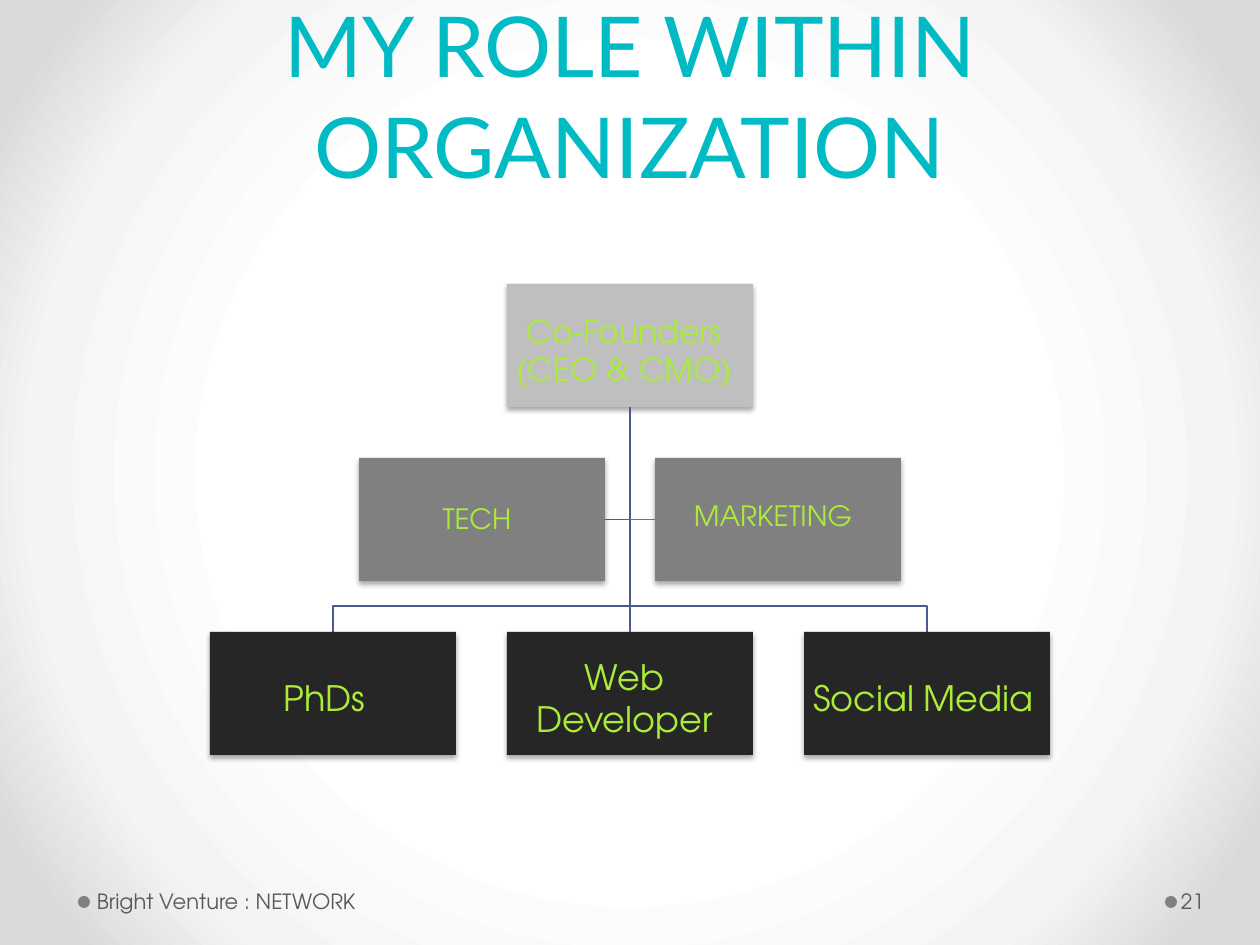
from dataclasses import dataclass

from lxml import etree
from pptx import Presentation
from pptx.dml.color import RGBColor
from pptx.enum.shapes import MSO_CONNECTOR, MSO_SHAPE
from pptx.enum.text import MSO_ANCHOR, MSO_AUTO_SIZE, PP_ALIGN
from pptx.oxml import parse_xml
from pptx.oxml.ns import qn
from pptx.util import Pt

RECT, OVAL = MSO_SHAPE.RECTANGLE, MSO_SHAPE.OVAL
STRAIGHT = MSO_CONNECTOR.STRAIGHT
MIDDLE, BOTTOM = MSO_ANCHOR.MIDDLE, MSO_ANCHOR.BOTTOM
CENTER, LEFT = PP_ALIGN.CENTER, PP_ALIGN.LEFT
NO_FIT = MSO_AUTO_SIZE.NONE

EMU_PER_PX = 914400 / 126
A_NS = 'xmlns:a="http://schemas.openxmlformats.org/drawingml/2006/main"'
BODY_FONT, TITLE_FONT = "TeX Gyre Adventor", "Lato"
TITLE_COLOR, LABEL_COLOR, FOOTER_COLOR = "00BAC4", "AAEC39", "595959"
LINK_COLOR, SIDE_LINK_COLOR, BULLET_COLOR = "4A5B8E", "5C72B2", "808080"
BACKGROUND_STOPS = [(50, "FFFFFF"), (76, "F4F4F4"), (92, "DADADA")]

# Chart grid in px
CENTER_X = 630
BOX_W, BOX_H = 246, 123
FIRST_ROW, ROW_PITCH = 284, 174
BRANCH_Y = 606


@dataclass
class Label:
    text: str
    left: int
    top: int
    width: int
    height: int
    size: int
    color: str = LABEL_COLOR
    align: PP_ALIGN = CENTER
    insets: tuple = (6, 6, 13, 6)


@dataclass
class Box:
    row: int
    offset: int  # box centre relative to the chart's axis
    fill: str
    label: Label


BOXES = {
    "founders": Box(0, 0, "BFBFBF", Label("Co-Founders\n(CEO & CMO)", 494, 291, 268, 118, 18)),
    "tech": Box(1, -148, "808080", Label("TECH", 333, 459, 295, 118, 16)),
    "marketing": Box(1, 148, "808080", Label("MARKETING", 629, 456, 295, 118, 16)),
    "phds": Box(2, -297, "262626", Label("PhDs", 194, 638, 268, 118, 20)),
    "web": Box(2, 0, "262626", Label("Web Developer", 494, 638, 268, 118, 20)),
    "social": Box(2, 297, "262626", Label("Social Media", 793, 638, 268, 118, 20)),
}
FOOTERS = [
    Label("Bright Venture : NETWORK", 91, 876, 392, 50, 12, FOOTER_COLOR, LEFT),
    Label("21", 1177, 876, 77, 50, 12, FOOTER_COLOR, LEFT, (4, 6, 6, 6)),
]
BULLET_LEFTS = [1165, 78]


def px(value: float) -> int:
    return round(value * EMU_PER_PX)


def rgb(value: str) -> RGBColor:
    return RGBColor.from_string(value)


def set_background(s) -> None:
    fill = s.background.fill
    fill.gradient()
    grad = s.background._cSld.find(".//" + qn("a:gradFill"))
    stops = "".join(f'<a:gs pos="{pos * 1000}"><a:srgbClr val="{color}"/></a:gs>'
                    for pos, color in BACKGROUND_STOPS)
    grad.getparent().replace(grad, parse_xml(
        f'<a:gradFill {A_NS} rotWithShape="1"><a:gsLst>{stops}</a:gsLst><a:path path="circle">'
        '<a:fillToRect l="50000" t="50000" r="50000" b="50000"/></a:path></a:gradFill>'))


def add_solid(s, kind: MSO_SHAPE, left: int, top: int, width: int, height: int, color: str):
    shape = s.shapes.add_shape(kind, px(left), px(top), px(width), px(height))
    shape.shadow.inherit = False
    shape.fill.solid()
    shape.fill.fore_color.rgb = rgb(color)
    shape.line.fill.background()
    return shape


def add_box(s, box: Box):
    shape = add_solid(s, RECT, CENTER_X + box.offset - BOX_W // 2,
                      FIRST_ROW + box.row * ROW_PITCH, BOX_W, BOX_H, box.fill)
    shape._element.spPr.find(qn("a:effectLst")).append(parse_xml(
        f'<a:outerShdw {A_NS} blurRad="{Pt(3.1)}" dist="{Pt(1.8)}" dir="5400000" rotWithShape="0">'
        '<a:srgbClr val="000000"><a:alpha val="35000"/></a:srgbClr></a:outerShdw>'))
    return shape


def add_label(s, label: Label) -> None:
    tb = s.shapes.add_textbox(px(label.left), px(label.top), px(label.width), px(label.height))
    tf = tb.text_frame
    tf.word_wrap = True
    tf.vertical_anchor = MIDDLE
    tf.margin_left, tf.margin_top, tf.margin_right, tf.margin_bottom = map(px, label.insets)
    tf.text = label.text
    for p in tf.paragraphs:
        p.alignment = label.align
        for r in p.runs:
            r.font.name = BODY_FONT
            r.font.size = Pt(label.size)
            r.font.color.rgb = rgb(label.color)


def style_line(shape, color: str) -> None:
    shape.line.color.rgb = rgb(color)
    shape.line.width = Pt(0.75)


def add_link(s, x1: int, y1: int, x2: int, y2: int, color: str = LINK_COLOR):
    link = s.shapes.add_connector(STRAIGHT, px(x1), px(y1), px(x2), px(y2))
    style_line(link, color)
    etree.SubElement(link._element.spPr, qn("a:effectLst"))
    return link


def add_branch(s, end_x: int) -> None:
    start_y, end_y = FIRST_ROW + BOX_H, FIRST_ROW + 2 * ROW_PITCH
    builder = s.shapes.build_freeform(CENTER_X, start_y, scale=EMU_PER_PX)
    builder.add_line_segments([(CENTER_X, BRANCH_Y), (end_x, BRANCH_Y), (end_x, end_y)], close=False)
    branch = builder.convert_to_shape()
    branch.shadow.inherit = False
    branch.fill.background()
    style_line(branch, LINK_COLOR)


def set_title(s, text: str) -> None:
    title = s.shapes.title
    title.left, title.top, title.width, title.height = px(63), px(19), px(1134), px(183)
    tf = title.text_frame
    tf.text = text
    tf.word_wrap = True
    tf.auto_size = NO_FIT
    tf.vertical_anchor = BOTTOM
    p = tf.paragraphs[0]
    p.alignment = CENTER
    p.line_spacing = Pt(58)
    font = p.runs[0].font
    font.name, font.size = TITLE_FONT, Pt(48)
    font.color.rgb = rgb(TITLE_COLOR)


def main() -> None:
    prs = Presentation()
    prs.slide_width, prs.slide_height = px(1260), px(945)
    s = prs.slides.add_slide(prs.slide_layouts[5])
    set_background(s)
    set_title(s, "MY ROLE WITHIN ORGANIZATION")

    # Footer with bullets
    for left in BULLET_LEFTS:
        add_solid(s, OVAL, left, 896, 12, 12, BULLET_COLOR)
    for footer in FOOTERS:
        add_label(s, footer)

    # Branches to the outer boxes of the last row
    for name in ("phds", "social"):
        add_branch(s, CENTER_X + BOXES[name].offset)

    # Boxes
    shapes = {name: add_box(s, box) for name, box in BOXES.items()}

    # Trunk and side links
    trunk = add_link(s, CENTER_X, FIRST_ROW + BOX_H, CENTER_X, FIRST_ROW + 2 * ROW_PITCH)
    trunk.begin_connect(shapes["founders"], 2)
    trunk.end_connect(shapes["web"], 0)
    side_y = FIRST_ROW + ROW_PITCH + BOX_H / 2
    for name, site, color in (("tech", 3, LINK_COLOR), ("marketing", 1, SIDE_LINK_COLOR)):
        link = add_link(s, CENTER_X, side_y, CENTER_X, side_y, color)
        link.end_connect(shapes[name], site)

    # Labels
    for box in BOXES.values():
        add_label(s, box.label)

    prs.save("out.pptx")


if __name__ == "__main__":
    main()
